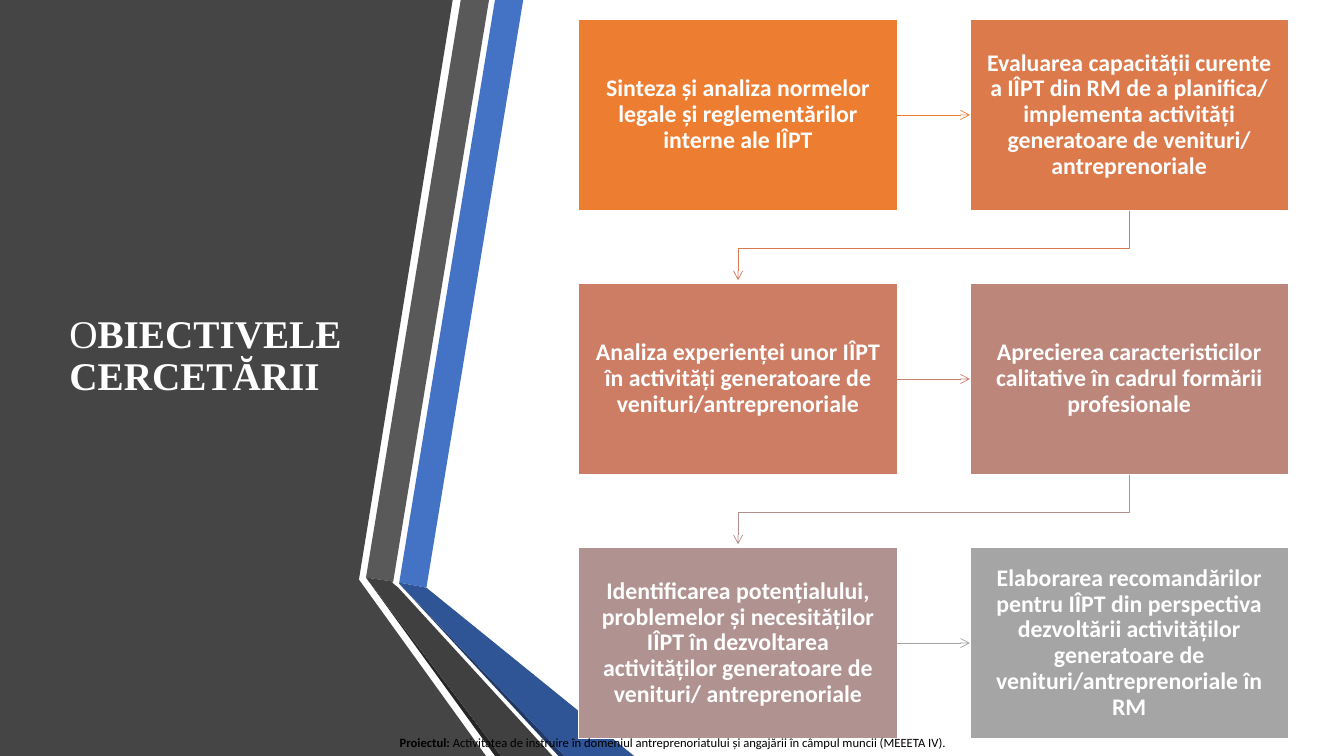
import pptx
import pptx.dml.color
import pptx.enum.shapes
import pptx.enum.text
import pptx.oxml
import pptx.oxml.ns
import pptx.util
from pptx.util import Inches

BAND_PANELS = [
    ("454545", [(0, 0), (4.49, 0), (3.56, 5.75), (4.82, 7.5), (0, 7.5)]),
    ("4472C4", [(3.96, 5.78), (4.23, 5.83), (5.19, 0), (4.91, 0)]),
    ("595959", [(4.85, 0), (4.57, 0), (3.63, 5.73), (3.9, 5.77)]),
    ("262626", [(3.63, 5.73), (4.91, 7.5), (4.97, 7.5)]),
    ("203864", [(3.96, 5.79), (5.54, 7.5), (5.6, 7.5)]),
    ("2F5597", [(3.96, 5.79), (5.6, 7.5), (6.29, 7.5), (4.23, 5.83), (3.96, 5.78)]),
    ("404040", [(5.48, 7.5), (3.95, 5.83), (3.89, 5.78), (3.9, 5.77), (3.63, 5.73), (4.97, 7.5)]),
]

OBJECTIVES = [
    ("ED7D31", "Sinteza și analiza normelor legale și reglementărilor interne ale IÎPT"),
    ("DC7A4B", "Evaluarea capacității curente a IÎPT din RM de a planifica/ implementa "
               "activități generatoare de venituri/ antreprenoriale"),
    ("CC7D64", "Analiza experienței unor IÎPT în activități generatoare de "
               "venituri/antreprenoriale"),
    ("BD867B", "Aprecierea caracteristicilor calitative în cadrul formării profesionale"),
    ("B09391", "Identificarea potențialului, problemelor și necesităților IÎPT în "
               "dezvoltarea activităților generatoare de venituri/ antreprenoriale"),
    ("A5A5A5", "Elaborarea recomandărilor pentru IÎPT din perspectiva dezvoltării "
               "activităților generatoare de venituri/antreprenoriale în RM"),
]
ARROW_COLORS = ["ED7D31", "D87A51", "C48170", "B4908B", "A5A5A5"]

GRID_LEFT, GRID_TOP = 5.74, 0.19
COLUMN_STEP, ROW_STEP = 3.88, 2.62
BOX_WIDTH, BOX_HEIGHT = 3.16, 1.9


def color(value):
    return pptx.dml.color.RGBColor.from_string(value)


class SlideBuilder:
    body_font = "Calibri"
    title_font = "Times New Roman"
    arrow_width = pptx.util.Pt(0.5)

    def __init__(self, slide):
        self.slide = slide

    def add_text(self, shape, runs, font, size, text_color, centered=True):
        frame = shape.text_frame
        frame.word_wrap = True
        frame.vertical_anchor = pptx.enum.text.MSO_ANCHOR.MIDDLE
        paragraph = frame.paragraphs[0]
        alignment = pptx.enum.text.PP_ALIGN
        paragraph.alignment = alignment.CENTER if centered else alignment.LEFT
        paragraph.line_spacing = 0.9
        for text, bold in runs:
            run = paragraph.add_run()
            run.text = text
            run.font.name = font
            run.font.size = pptx.util.Pt(size)
            run.font.bold = bold
            run.font.color.rgb = color(text_color)

    def textbox(self, left, top, width, height, runs, font, size, text_color, centered=True):
        shape = self.slide.shapes.add_textbox(
            Inches(left), Inches(top), Inches(width), Inches(height))
        self.add_text(shape, runs, font, size, text_color, centered)

    def outline(self, points, closed):
        points = [(Inches(x), Inches(y)) for x, y in points]
        builder = self.slide.shapes.build_freeform(*points[0])
        builder.add_line_segments(points[1:], close=closed)
        shape = builder.convert_to_shape()
        shape.shadow.inherit = False
        return shape

    def panel(self, fill, points):
        shape = self.outline(points, True)
        shape.fill.solid()
        shape.fill.fore_color.rgb = color(fill)
        shape.line.fill.background()

    def box(self, left, top, fill, text):
        shape = self.slide.shapes.add_shape(
            pptx.enum.shapes.MSO_SHAPE.RECTANGLE,
            Inches(left), Inches(top), Inches(BOX_WIDTH), Inches(BOX_HEIGHT))
        shape.shadow.inherit = False
        shape.fill.solid()
        shape.fill.fore_color.rgb = color(fill)
        shape.line.color.rgb = color("FFFFFF")
        shape.line.width = pptx.util.Pt(1)
        frame = shape.text_frame
        frame.margin_left = frame.margin_right = Inches(0.15)
        frame.margin_top = frame.margin_bottom = Inches(0.16)
        self.add_text(shape, [(text, True)], self.body_font, 17, "FFFFFF")
        return shape

    def style_arrow(self, shape, line_color):
        shape.line.color.rgb = color(line_color)
        shape.line.width = self.arrow_width
        tail = pptx.oxml.parse_xml(
            f'<a:tailEnd {pptx.oxml.ns.nsdecls("a")} type="arrow"/>')
        shape.element.spPr.find(pptx.oxml.ns.qn("a:ln")).append(tail)

    def straight_arrow(self, source, target, line_color):
        connector = self.slide.shapes.add_connector(
            pptx.enum.shapes.MSO_CONNECTOR.STRAIGHT, 0, 0, 0, 0)
        connector.begin_connect(source, 3)
        connector.end_connect(target, 1)
        self.style_arrow(connector, line_color)
        connector.element.spPr.append(pptx.oxml.parse_xml(
            f'<a:effectLst {pptx.oxml.ns.nsdecls("a")}/>'))

    def return_arrow(self, bottom, line_color):
        left = GRID_LEFT + BOX_WIDTH / 2
        right = left + COLUMN_STEP
        shape = self.outline([(right, bottom), (right, bottom + 0.37),
                              (left, bottom + 0.37), (left, bottom + 0.69)], False)
        shape.fill.background()
        self.style_arrow(shape, line_color)


def main():
    presentation = pptx.Presentation()
    presentation.slide_width = Inches(13.33)
    presentation.slide_height = Inches(7.5)
    slide = presentation.slides.add_slide(presentation.slide_layouts[6])
    builder = SlideBuilder(slide)

    for fill, points in BAND_PANELS:
        builder.panel(fill, points)
    builder.textbox(0.59, 0.75, 3.04, 5.58,
                    [("O", False), ("BIECTIVELE CERCETĂRII", True)],
                    builder.title_font, 28, "FFFFFF", centered=False)

    boxes = []
    for index, (fill, text) in enumerate(OBJECTIVES):
        row, column = divmod(index, 2)
        boxes.append(builder.box(GRID_LEFT + column * COLUMN_STEP,
                                 GRID_TOP + row * ROW_STEP, fill, text))
    for index, line_color in enumerate(ARROW_COLORS):
        row, column = divmod(index, 2)
        if column == 0:
            builder.straight_arrow(boxes[index], boxes[index + 1], line_color)
        else:
            builder.return_arrow(GRID_TOP + row * ROW_STEP + BOX_HEIGHT, line_color)

    builder.textbox(3.78, 7.21, 5.78, 0.33,
                    [("Proiectul: ", True),
                     ("Activitatea de instruire în domeniul antreprenoriatului și "
                      "angajării în câmpul muncii (MEEETA IV).", False)],
                    builder.body_font, 9, "000000")
    presentation.save("out.pptx")


if __name__ == "__main__":
    main()
